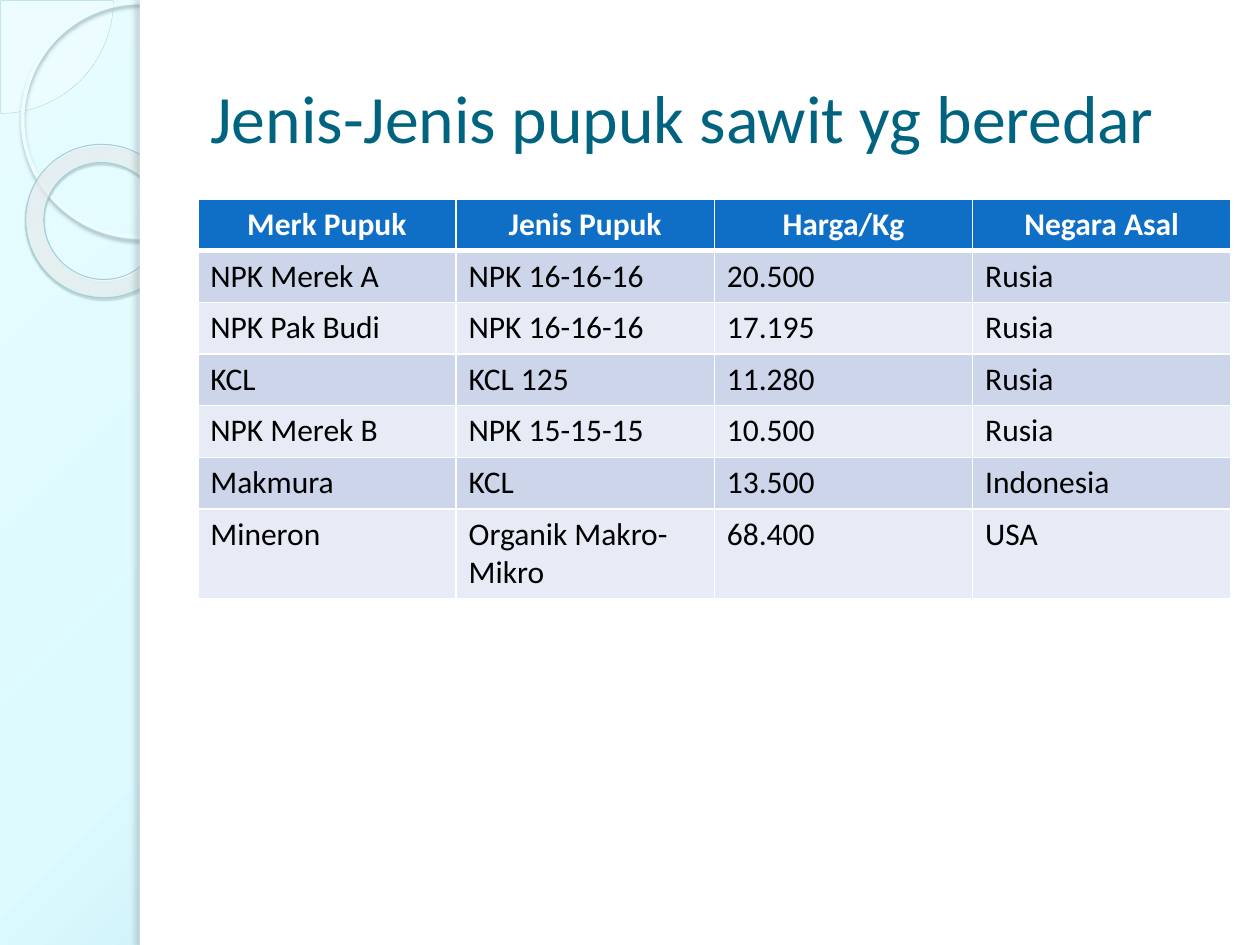
import dataclasses

import pptx
import pptx.dml.color
import pptx.enum.shapes
import pptx.enum.text
import pptx.oxml.ns
import pptx.oxml.xmlchemy
import pptx.util
from lxml import etree

Inches = pptx.util.Inches
Pt = pptx.util.Pt
qn = pptx.oxml.ns.qn
Shape = pptx.enum.shapes.MSO_SHAPE


@dataclasses.dataclass(frozen=True)
class Theme:
    font: str = "Calibri"
    title_size: float = 38.7
    table_size: float = 18
    title: str = "00637F"
    header: str = "0F6FC6"
    bands: tuple = ("CCD5EA", "E7EBF5")
    white: str = "FFFFFF"
    black: str = "000000"
    backdrop: tuple = ((0, "E7FCFF", 100), (40, "DCFAFF", 100), (100, "92CED7", 100))
    quarter_fill: str = "F8FEFF"
    quarter_line: str = "AFDBE2"
    ring_line: str = "EDFCFF"
    ring_shadow: str = "9CB9BE"
    donut: tuple = ((0, "F9FEFF", 70), (70, "FDFFFF", 55), (100, "9EF2FF", 60))
    donut_line: str = "A1CFD6"
    donut_shadow: str = "4B5E61"
    edge_shadow: str = "6C7A7C"


THEME = Theme()
TITLE = "Jenis-Jenis pupuk sawit yg beredar"
FERTILIZERS = (
    ("Merk Pupuk", "Jenis Pupuk", "Harga/Kg", "Negara Asal"),
    ("NPK Merek A", "NPK 16-16-16", "20.500", "Rusia"),
    ("NPK Pak Budi", "NPK 16-16-16", "17.195", "Rusia"),
    ("KCL", "KCL 125", "11.280", "Rusia"),
    ("NPK Merek B", "NPK 15-15-15", "10.500", "Rusia"),
    ("Makmura", "KCL", "13.500", "Indonesia"),
    ("Mineron", "Organik Makro-Mikro", "68.400", "USA"),
)


def rgb(color):
    return pptx.dml.color.RGBColor.from_string(color)


def add_child(parent, tag, **attributes):
    values = {name: str(value) for name, value in attributes.items()}
    return etree.SubElement(parent, qn(tag), values)


def add_color(parent, color, opacity=100):
    node = add_child(parent, "a:srgbClr", val=color)
    if opacity < 100:
        add_child(node, "a:alpha", val=opacity * 1000)


def set_radial_gradient(fill, owner, stops, focus):
    fill.gradient()
    gradient = next(owner.iter(qn("a:gradFill")))
    for child in list(gradient):
        gradient.remove(child)
    stop_list = add_child(gradient, "a:gsLst")
    for position, color, opacity in stops:
        add_color(add_child(stop_list, "a:gs", pos=position * 1000), color, opacity)
    radial = add_child(gradient, "a:path", path="circle")
    sides = {side: value * 1000 for side, value in zip("ltrb", focus)}
    add_child(radial, "a:fillToRect", **sides)


def add_ornament(slide, kind, box, fill=None, opacity=100, line=None, width=0):
    ornament = slide.shapes.add_shape(kind, *map(Inches, box))
    ornament.shadow.inherit = False
    if fill:
        ornament.fill.solid()
        ornament.fill.fore_color.rgb = rgb(fill)
        if opacity < 100:
            color = next(ornament.element.spPr.iter(qn("a:srgbClr")))
            add_child(color, "a:alpha", val=opacity * 1000)
    else:
        ornament.fill.background()
    if line:
        ornament.line.color.rgb = rgb(line)
        ornament.line.width = Pt(width)
    else:
        ornament.line.fill.background()
    return ornament


def add_shadow(ornament, color, opacity, blur, distance, angle):
    effects = ornament.element.spPr.find(qn("a:effectLst"))
    shadow = add_child(effects, "a:outerShdw", blurRad=Pt(blur), dist=Pt(distance),
                       dir=angle * 60000, algn="tl", rotWithShape=0)
    add_color(shadow, color, opacity)


def add_side_decoration(slide):
    set_radial_gradient(slide.background.fill, slide.element, THEME.backdrop,
                        (-24, -20, 124, 120))

    quarter = add_ornament(slide, Shape.PIE, (-0.89, -0.89, 1.79, 1.79),
                           THEME.quarter_fill, 33, THEME.quarter_line, 0.25)
    quarter.adjustments[0] = 0
    quarter.adjustments[1] = 54

    ring = add_ornament(slide, Shape.OVAL, (0.18, 0.02, 1.86, 1.86),
                        line=THEME.ring_line, width=2.15)
    add_shadow(ring, THEME.ring_shadow, 85, 2, 2, 90)

    donut = add_ornament(slide, Shape.DONUT, (0.2, 1.15, 1.23, 1.21),
                         line=THEME.donut_line, width=0.58)
    donut.adjustments[0] = 0.12
    donut.rotation = 38.6
    set_radial_gradient(donut.fill, donut.element, THEME.donut, (-408, -50, 508, 150))
    add_shadow(donut, THEME.donut_shadow, 35, 1, 1.2, 75)

    add_ornament(slide, Shape.RECTANGLE, (1.11, 0, 8.89, 7.5), THEME.white)
    edge = add_ornament(slide, Shape.RECTANGLE, (1.11, 0, 0.08, 7.5), THEME.white)
    add_shadow(edge, THEME.edge_shadow, 25, 3, 3, 180)


def format_text(paragraph, size, color, bold=False):
    for run in paragraph.runs:
        run.font.name = THEME.font
        run.font.size = Pt(size)
        run.font.bold = bold
        run.font.color.rgb = rgb(color)


def add_title(slide):
    title = slide.shapes.title
    title.left, title.top = Inches(1.57), Inches(0.3)
    title.width, title.height = Inches(8.2), Inches(1.25)
    title.text_frame.text = TITLE
    title.text_frame.vertical_anchor = pptx.enum.text.MSO_ANCHOR.MIDDLE
    heading = title.text_frame.paragraphs[0]
    heading.alignment = pptx.enum.text.PP_ALIGN.LEFT
    format_text(heading, THEME.title_size, THEME.title)
    title.element.getparent().append(title.element)


def set_borders(cell, top, bottom):
    properties = cell._tc.get_or_add_tcPr()
    for side, width in (("L", 1), ("R", 1), ("T", top), ("B", bottom)):
        border = add_child(properties, f"a:ln{side}", w=Pt(width))
        add_color(add_child(border, "a:solidFill"), THEME.white)


def add_fertilizer_table(slide):
    row_height = 0.41
    table = slide.shapes.add_table(
        len(FERTILIZERS), len(FERTILIZERS[0]), Inches(1.57), Inches(1.58),
        Inches(8.2), Inches(row_height * len(FERTILIZERS))).table
    for row, values in enumerate(FERTILIZERS):
        is_header = row == 0
        for column, value in enumerate(values):
            cell = table.cell(row, column)
            set_borders(cell, 3 if row == 1 else 1, 3 if is_header else 1)
            cell.fill.solid()
            cell.fill.fore_color.rgb = rgb(
                THEME.header if is_header else THEME.bands[(row - 1) % 2])
            cell.text_frame.text = value
            paragraph = cell.text_frame.paragraphs[0]
            if is_header:
                paragraph.alignment = pptx.enum.text.PP_ALIGN.CENTER
            format_text(paragraph, THEME.table_size,
                        THEME.white if is_header else THEME.black, is_header)


def main():
    presentation = pptx.Presentation()
    presentation.slide_width = Inches(10)
    presentation.slide_height = Inches(7.5)
    slide = presentation.slides.add_slide(presentation.slide_layouts[5])
    add_side_decoration(slide)
    add_title(slide)
    add_fertilizer_table(slide)
    presentation.save("out.pptx")


if __name__ == "__main__":
    main()
